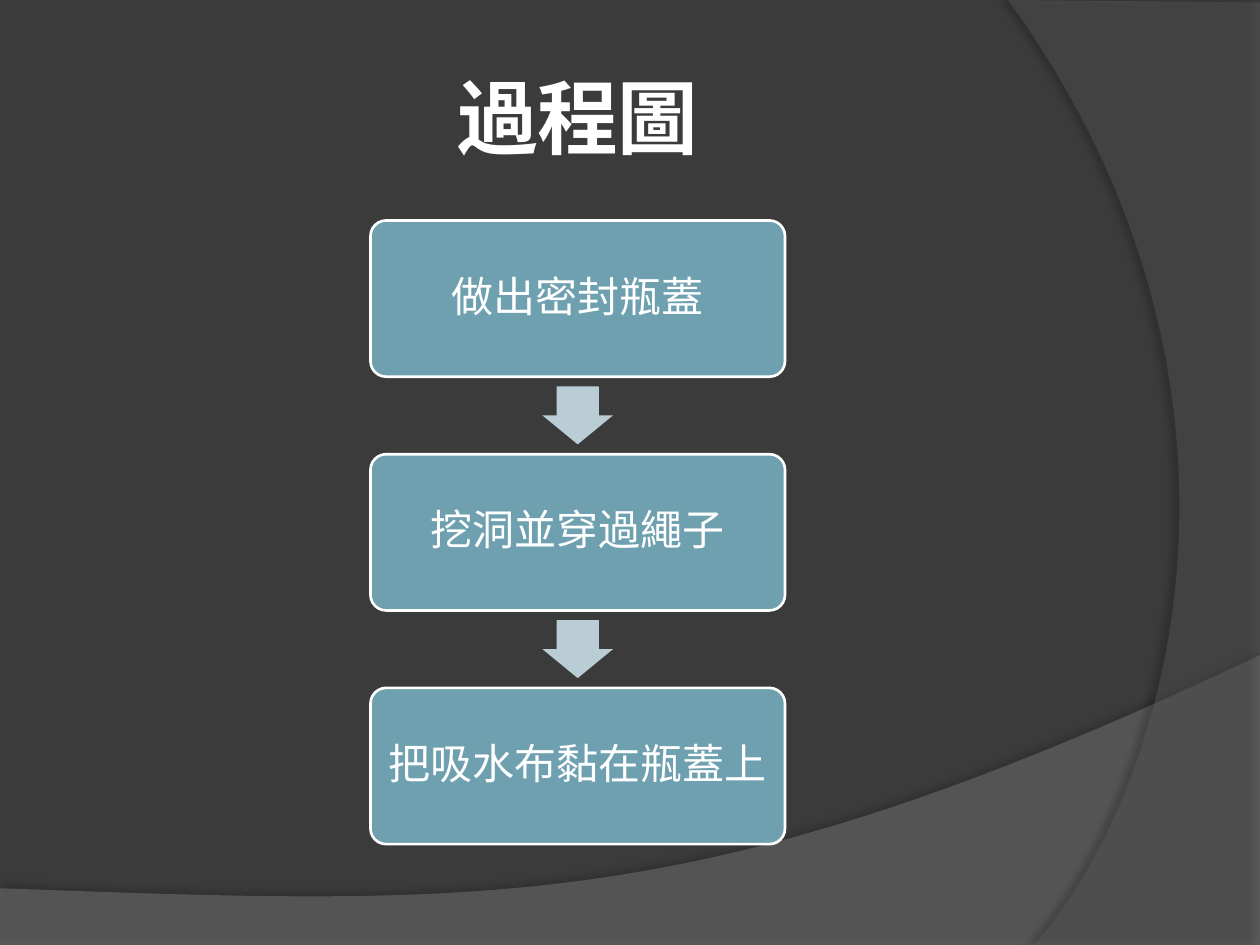
import lxml.etree
import pptx
import pptx.dml.color
import pptx.enum.shapes
import pptx.enum.text
import pptx.oxml
import pptx.oxml.ns
import pptx.util

Inches = pptx.util.Inches
Pt = pptx.util.Pt
SHAPE = pptx.enum.shapes.MSO_SHAPE

STEPS = ["做出密封瓶蓋", "挖洞並穿過繩子", "把吸水布黏在瓶蓋上"]
BOX_LEFT, BOX_TOP, BOX_W, BOX_H = 2.94, 1.75, 3.29, 1.24
ARROW_W, ARROW_H = 0.46, 0.56
PITCH = 1.855


def rgb(value):
    """Return the colour for a hex string."""
    return pptx.dml.color.RGBColor.from_string(value)


def sub(parent, tag, **attrs):
    """Append a DrawingML child element and return it."""
    child = lxml.etree.SubElement(parent, pptx.oxml.ns.qn(tag))
    for name, value in attrs.items():
        child.set(name, str(value))
    return child


def write(shape, text, size=24, font="Arial", color="FFFFFF", bold=False,
          inset=0.1, spacing=None):
    """Put one centred, formatted line of text in a shape."""
    tf = shape.text_frame
    tf.word_wrap = True
    tf.auto_size = pptx.enum.text.MSO_AUTO_SIZE.NONE
    tf.vertical_anchor = pptx.enum.text.MSO_ANCHOR.MIDDLE
    tf.margin_left = tf.margin_right = Inches(inset)
    tf.margin_top = tf.margin_bottom = Inches(inset)
    p = tf.paragraphs[0]
    p.alignment = pptx.enum.text.PP_ALIGN.CENTER
    p.line_spacing = spacing
    r = p.add_run()
    r.text = text
    r.font.size = Pt(size)
    r.font.name = font
    r.font.bold = bold
    r.font.color.rgb = rgb(color)


def add_preset(s, kind, left, top, width, height, fill, line=None):
    """Add a flat preset shape with an optional outline."""
    sp = s.shapes.add_shape(kind, Inches(left), Inches(top),
                            Inches(width), Inches(height))
    sp.shadow.inherit = False
    sp.fill.solid()
    sp.fill.fore_color.rgb = rgb(fill)
    if line:
        sp.line.color.rgb = rgb(line)
        sp.line.width = Pt(1.5)
    else:
        sp.line.fill.background()
    return sp


def bezier(p0, p1, p2, p3, count=60):
    """Return points along a cubic curve, both ends included."""
    points = []
    for i in range(count + 1):
        t = i / count
        u = 1 - t
        weights = (u ** 3, 3 * u * u * t, 3 * u * t * t, t ** 3)
        points.append(tuple(sum(w * q[k] for w, q in zip(weights, (p0, p1, p2, p3)))
                            for k in (0, 1)))
    return points


def add_wave(s, corners, curve, fill, alpha, shadow_alpha, distance, angle):
    """Add a translucent background area with one curved, shadowed edge."""
    points = [(Inches(x), Inches(y)) for x, y in corners + bezier(*curve)]
    builder = s.shapes.build_freeform(*points[0], scale=1.0)
    builder.add_line_segments(points[1:], close=True)
    sp = builder.convert_to_shape()
    sp.fill.solid()
    sp.fill.fore_color.rgb = rgb(fill)
    sp.line.fill.background()
    sp.shadow.inherit = False
    spPr = sp.element.spPr
    sub(spPr.find(".//" + pptx.oxml.ns.qn("a:srgbClr")), "a:alpha", val=alpha * 1000)
    effects = spPr.find(pptx.oxml.ns.qn("a:effectLst"))
    shadow = sub(effects, "a:outerShdw", blurRad=Pt(4), dist=Pt(distance),
                 dir=angle * 60000, algn="ctr", rotWithShape=0)
    sub(sub(shadow, "a:srgbClr", val="000000"), "a:alpha", val=shadow_alpha * 1000)


def add_background(s):
    """Set the dark background and its two curved areas."""
    s.background.fill.solid()
    s.background.fill.fore_color.rgb = rgb("3B3B3B")
    add_wave(s, [(0, 7.51), (10, 7.51)],
             [(10, 5.2), (5.59, 7.29), (3.91, 7.19), (0, 7.05)],
             "7F7F7F", 45, 35, 3.5, 270)
    add_wave(s, [(10, 0.02), (10, 7.5)],
             [(8.21, 7.5), (9.35, 6.19), (10.18, 3), (8, 0)],
             "5E5E5E", 40, 45, 4, 180)


def add_title(s, text):
    """Place the title placeholder above the background areas."""
    sp = s.shapes.title
    sp.element.getparent().append(sp.element)
    sp.left, sp.top = Inches(0.5), Inches(0.3)
    sp.width, sp.height = Inches(8.17), Inches(1.25)
    write(sp, text, size=46, font="Roboto", bold=True, inset=0.05)


def add_process(s, steps):
    """Stack the step boxes with a down-pointing arrow in each gap."""
    for i, text in enumerate(steps):
        top = BOX_TOP + i * PITCH
        if i:
            center = top - (PITCH - BOX_H) / 2
            arrow = add_preset(s, SHAPE.RIGHT_ARROW,
                               BOX_LEFT + (BOX_W - ARROW_W) / 2,
                               center - ARROW_H / 2, ARROW_W, ARROW_H, "BACDD4")
            arrow.adjustments[0] = 0.6
            arrow.adjustments[1] = 0.5
            arrow.rotation = 90
        box = add_preset(s, SHAPE.ROUNDED_RECTANGLE, BOX_LEFT, top,
                         BOX_W, BOX_H, "6EA0B0", line="FFFFFF")
        box.adjustments[0] = 0.1
        write(box, text, spacing=0.9)


def main():
    """Build and save the process slide."""
    prs = pptx.Presentation()
    prs.slide_width, prs.slide_height = Inches(10), Inches(7.5)
    s = prs.slides.add_slide(prs.slide_layouts[5])
    add_background(s)
    add_title(s, "過程圖")
    add_process(s, STEPS)
    prs.save("out.pptx")


if __name__ == "__main__":
    main()
